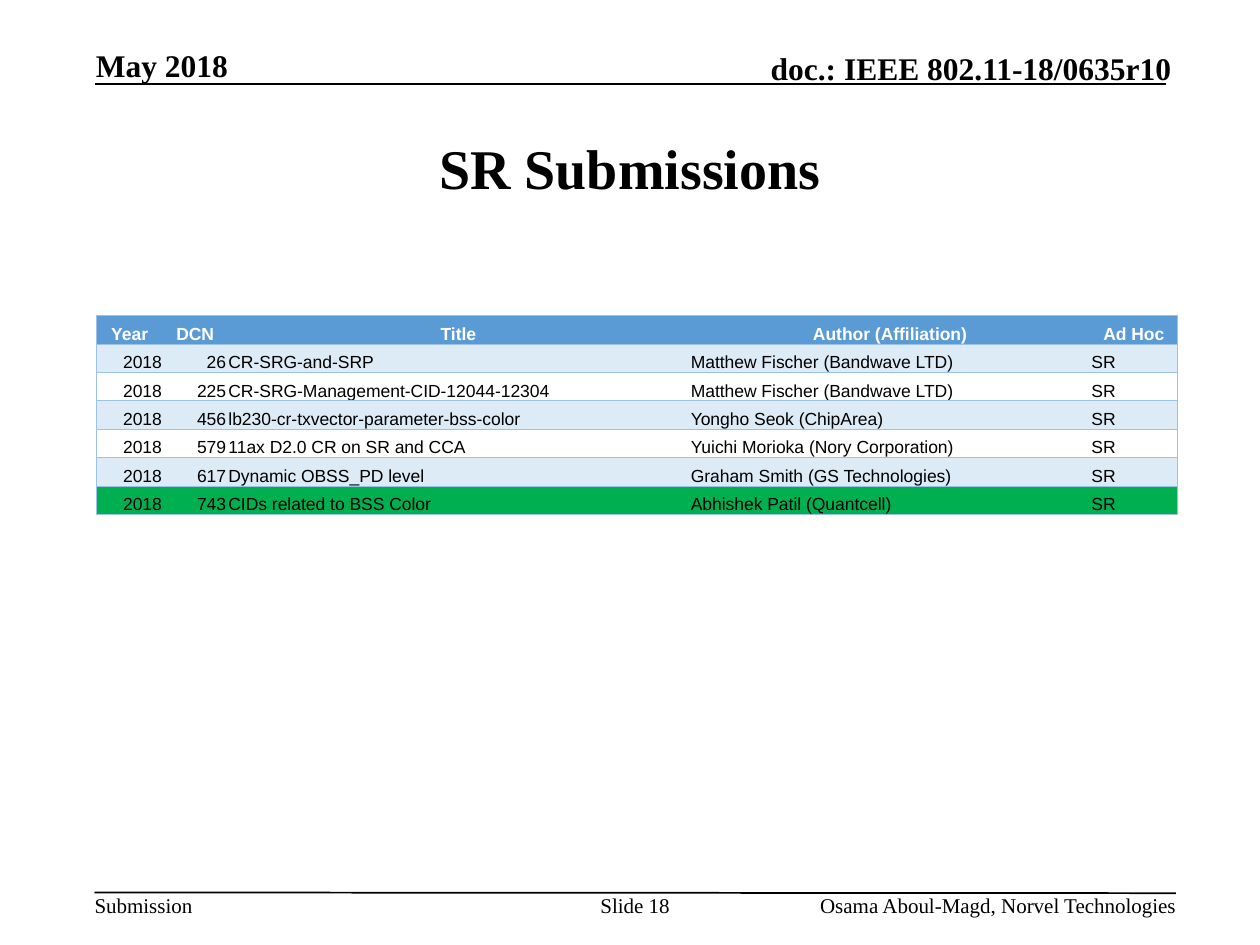
from lxml import etree
from pptx import Presentation
from pptx.dml.color import RGBColor
from pptx.enum.shapes import MSO_CONNECTOR
from pptx.enum.text import MSO_ANCHOR, MSO_AUTO_SIZE, PP_ALIGN
from pptx.oxml.ns import qn
from pptx.util import Pt

STRAIGHT = MSO_CONNECTOR.STRAIGHT
TOP, MIDDLE, BOTTOM = MSO_ANCHOR.TOP, MSO_ANCHOR.MIDDLE, MSO_ANCHOR.BOTTOM
LEFT, CENTER, RIGHT = PP_ALIGN.LEFT, PP_ALIGN.CENTER, PP_ALIGN.RIGHT
NO_FIT, GROW = MSO_AUTO_SIZE.NONE, MSO_AUTO_SIZE.SHAPE_TO_FIT_TEXT

COLORS = {
    "black": "000000",
    "white": "FFFFFF",
    "header": "5B9BD5",
    "band": "DDEBF7",
    "highlight": "00B050",
    "border": "9BC2E6",
}
TITLE = {"size": Pt(32), "name": "Times New Roman", "bold": True}
HEADER = {"size": Pt(18), "name": "Times New Roman", "bold": True}
FOOTER = {"size": Pt(12), "name": "Times New Roman", "bold": False}
CELL = {"size": Pt(10), "name": "Arial", "bold": False}
CELL_HEAD = {**CELL, "bold": True}

COL_WIDTHS = [38.2, 36.7, 264.2, 229, 49.7]
ROW_HEIGHT = 16.25
COL_ALIGNS = [RIGHT, RIGHT, LEFT, LEFT, LEFT]
COL_HEADS = ["Year", "DCN", "Title", "Author (Affiliation)", "Ad Hoc"]
SUBMISSIONS = [
    ("26", "CR-SRG-and-SRP", "Matthew Fischer (Bandwave LTD)"),
    ("225", "CR-SRG-Management-CID-12044-12304", "Matthew Fischer (Bandwave LTD)"),
    ("456", "lb230-cr-txvector-parameter-bss-color", "Yongho Seok (ChipArea)"),
    ("579", "11ax D2.0 CR on SR and CCA", "Yuichi Morioka (Nory Corporation)"),
    ("617", "Dynamic OBSS_PD level", "Graham Smith (GS Technologies)"),
    ("743", "CIDs related to BSS Color", "Abhishek Patil (Quantcell)"),
]


def format_text(tf, text, font, align, color="black"):
    p = tf.paragraphs[0]
    p.alignment = align
    r = p.add_run()
    r.text = text
    for name, value in font.items():
        setattr(r.font, name, value)
    r.font.color.rgb = RGBColor.from_string(COLORS[color])


def set_margins(target, left, top, right, bottom):
    for side, value in zip(("left", "top", "right", "bottom"), (left, top, right, bottom)):
        setattr(target, f"margin_{side}", Pt(value))


def add_title(s, text, box):
    sp = s.shapes.title
    sp.left, sp.top, sp.width, sp.height = map(Pt, box)
    tf = sp.text_frame
    tf.auto_size = NO_FIT
    tf.vertical_anchor = MIDDLE
    set_margins(tf, 7.2, 3.6, 7.2, 3.6)
    format_text(tf, text, TITLE, CENTER)


def add_text(s, text, box, font, align, anchor=TOP, wrap=True):
    tf = s.shapes.add_textbox(*map(Pt, box)).text_frame
    tf.word_wrap = wrap
    tf.auto_size = NO_FIT if wrap else GROW
    tf.vertical_anchor = anchor
    set_margins(tf, 0, 0, 0, 0)
    format_text(tf, text, font, align)


def add_rule(s, x1, y1, x2, y2):
    line = s.shapes.add_connector(STRAIGHT, *map(Pt, (x1, y1, x2, y2)))
    line.line.width = Pt(1)
    line.line.color.rgb = RGBColor.from_string(COLORS["black"])
    etree.SubElement(line._element.spPr, qn("a:effectLst"))


def set_borders(cell, visible):
    tcPr = cell._tc.get_or_add_tcPr()
    for side in "LRTB":
        ln = etree.SubElement(tcPr, qn(f"a:ln{side}"), w=str(Pt(0.5)))
        if side in visible:
            fill = etree.SubElement(ln, qn("a:solidFill"))
            etree.SubElement(fill, qn("a:srgbClr"), val=COLORS["border"])
        else:
            etree.SubElement(ln, qn("a:noFill"))


def format_cell(cell, text, font, align, color, fill, borders):
    cell.vertical_anchor = BOTTOM
    set_margins(cell, 0.7, 0.7, 0.7, 0)
    format_text(cell.text_frame, text, font, align, color)
    set_borders(cell, borders)
    if fill:
        cell.fill.solid()
        cell.fill.fore_color.rgb = RGBColor.from_string(COLORS[fill])
    else:
        cell.fill.background()


def row_fill(i, last):
    if i == 0:
        return "header"
    if i == last:
        return "highlight"
    return "band" if i % 2 else None


def add_submissions(s, left, top):
    rows = [COL_HEADS] + [("2018", *entry, "SR") for entry in SUBMISSIONS]
    last_row, last_col = len(rows) - 1, len(COL_HEADS) - 1
    size = (sum(COL_WIDTHS), ROW_HEIGHT * len(rows))
    table = s.shapes.add_table(len(rows), len(COL_HEADS), Pt(left), Pt(top), *map(Pt, size)).table
    table.first_row = table.horz_banding = False
    for col, width in zip(table.columns, COL_WIDTHS):
        col.width = Pt(width)
    for i, row in enumerate(rows):
        table.rows[i].height = Pt(ROW_HEIGHT)
        for j, text in enumerate(row):
            borders = "TB" + ("L" if j == 0 else "") + ("R" if j == last_col else "")
            font, align, color = (CELL, COL_ALIGNS[j], "black") if i else (CELL_HEAD, CENTER, "white")
            format_cell(table.cell(i, j), text, font, align, color, row_fill(i, last_row), borders)


def main():
    prs = Presentation()
    prs.slide_width, prs.slide_height = Pt(720), Pt(540)
    s = prs.slides.add_slide(prs.slide_layouts[5])
    add_rule(s, 54, 48, 666, 48)
    add_text(s, "Submission", (54, 510, 56, 14.4), FOOTER, LEFT, wrap=False)
    add_rule(s, 54, 510, 672, 510.4)
    add_text(s, "doc.: IEEE 802.11-18/0635r10", (393.8, 28, 275.6, 21.6), HEADER, RIGHT, BOTTOM)
    add_title(s, "SR Submissions", (54, 54, 612, 83.5))
    add_text(s, "May 2018", (54.8, 26.2, 147.6, 21.6), HEADER, LEFT, BOTTOM)
    add_text(s, "Osama Aboul-Magd, Norvel Technologies", (421.6, 510, 250.6, 14.4), FOOTER, RIGHT)
    add_text(s, "Slide 18", (342, 510, 41.8, 28.8), FOOTER, CENTER)
    add_submissions(s, 55, 180.3)
    prs.save("out.pptx")


if __name__ == "__main__":
    main()
